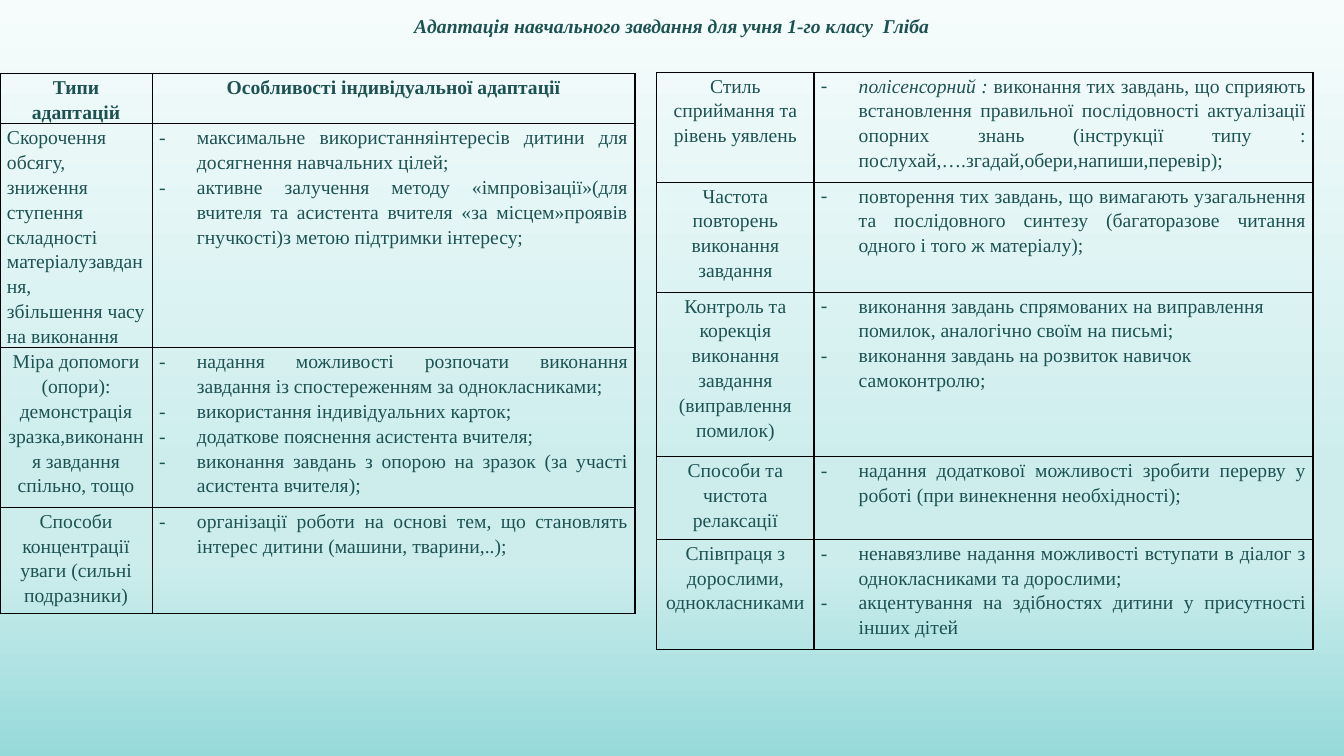
from copy import deepcopy
from dataclasses import dataclass

from lxml.etree import SubElement
from pptx import Presentation
from pptx.dml.color import RGBColor
from pptx.enum.text import MSO_ANCHOR as Anchor, MSO_AUTO_SIZE as AutoSize, PP_ALIGN as Align
from pptx.oxml import parse_xml
from pptx.oxml.ns import nsdecls, qn
from pptx.util import Pt

INK = RGBColor(0x1D, 0x52, 0x53)
BORDER = RGBColor(0x00, 0x00, 0x00)
BACKGROUND_STOPS = [
    (0, RGBColor(0xF6, 0xFC, 0xFC)),
    (0.62, RGBColor(0xCD, 0xED, 0xED)),
    (0.74, RGBColor(0xCD, 0xED, 0xED)),
    (1, RGBColor(0x97, 0xDA, 0xDA)),
]
FONT = "Times New Roman"
TITLE = "Адаптація навчального завдання для учня 1-го класу  Гліба"


@dataclass
class Row:
    height: float
    label: list
    items: list
    label_align: Align = Align.CENTER
    items_align: Align = Align.JUSTIFY
    header: bool = False
    lead: str = ""


SUPPORT_ROWS = [
    Row(36, ["Типи адаптацій"], ["Особливості індивідуальної адаптації"],
        items_align=Align.CENTER, header=True),
    Row(152,
        ["Скорочення обсягу, зниження ступення складності матеріалузавдання,",
         "збільшення часу на виконання"],
        ["максимальне використанняінтересів дитини для досягнення навчальних цілей;",
         "активне залучення методу «імпровізації»(для вчителя та асистента вчителя "
         "«за місцем»проявів гнучкості)з метою підтримки інтересу;"],
        label_align=Align.LEFT),
    Row(114,
        ["Міра допомоги (опори):", "демонстрація зразка,виконання завдання спільно, тощо"],
        ["надання можливості розпочати виконання завдання із спостереженням за однокласниками;",
         "використання індивідуальних карток;",
         "додаткове пояснення асистента вчителя;",
         "виконання завдань з опорою на зразок (за участі асистента вчителя);"]),
    Row(76, ["Способи концентрації уваги (сильні подразники)"],
        ["організації роботи на основі тем, що становлять інтерес дитини (машини, тварини,..);"]),
]

LEARNING_ROWS = [
    Row(78.6, ["Стиль сприймання та рівень уявлень"],
        ["виконання тих завдань, що сприяють встановлення правильної послідовності "
         "актуалізації опорних знань (інструкції типу : "
         "послухай,….згадай,обери,напиши,перевір);"],
        lead="полісенсорний : "),
    Row(78.6, ["Частота повторень виконання завдання"],
        ["повторення тих завдань, що вимагають узагальнення та послідовного синтезу "
         "(багаторазове читання одного і того ж матеріалу);"]),
    Row(117.5, ["Контроль та корекція виконання завдання (виправлення помилок)"],
        ["виконання завдань спрямованих на виправлення помилок, аналогічно своїм на письмі;",
         "виконання завдань на розвиток навичок самоконтролю;"],
        items_align=Align.LEFT),
    Row(59, ["Способи та чистота релаксації"],
        ["надання додаткової можливості зробити перерву у роботі (при винекнення необхідності);"]),
    Row(78.6, ["Співпраця з дорослими, однокласниками"],
        ["ненавязливе надання можливості вступати в діалог з однокласниками та дорослими;",
         "акцентування на здібностях дитини у присутності інших дітей"]),
]


def format_span(span, bold=False, italic=False):
    span.font.name = FONT
    span.font.size = Pt(14)
    span.font.color.rgb = INK
    span.font.bold = bold
    span.font.italic = italic


def paint_background(page):
    fill = page.background.fill
    fill.gradient()
    fill.gradient_angle = 270
    stop_list = page.element.xpath(".//p:bg//a:gsLst")[0]
    while len(stop_list) < len(BACKGROUND_STOPS):
        stop_list.append(deepcopy(stop_list[-1]))
    for stop, (position, color) in zip(fill.gradient_stops, BACKGROUND_STOPS):
        stop.position = position
        stop.color.rgb = color


def place_title(page):
    title = page.shapes.title
    title.left, title.top, title.width, title.height = Pt(0), Pt(0), Pt(960), Pt(36)
    frame = title.text_frame
    frame.text = TITLE
    frame.word_wrap = False
    frame.auto_size = AutoSize.NONE
    frame.vertical_anchor = Anchor.MIDDLE
    para = frame.paragraphs[0]
    para.alignment = Align.CENTER
    format_span(para.runs[0], bold=True, italic=True)


def add_dash(para):
    properties = para._p.get_or_add_pPr()
    properties.set("marL", str(Pt(27)))
    properties.set("indent", str(-Pt(27)))
    SubElement(properties, qn("a:buFont")).set("typeface", FONT)
    SubElement(properties, qn("a:buChar")).set("char", "-")


def draw_borders(cell):
    properties = cell._tc.get_or_add_tcPr()
    for index, side in enumerate(("lnL", "lnR", "lnT", "lnB")):
        properties.insert(index, parse_xml(
            f'<a:{side} {nsdecls("a")} w="{Pt(1)}"><a:solidFill>'
            f'<a:srgbClr val="{BORDER}"/></a:solidFill></a:{side}>'))


def fill_cell(cell, texts, align, bold=False, dashed=False, lead=""):
    cell.margin_left = cell.margin_right = Pt(5)
    cell.margin_top = cell.margin_bottom = Pt(0)
    cell.fill.background()
    draw_borders(cell)
    frame = cell.text_frame
    frame.text = "\n".join(texts)
    for para in frame.paragraphs:
        para.alignment = align
        para.line_spacing = 1.15
        if dashed:
            add_dash(para)
        if lead:
            body = para.text
            para.text = lead
            para.add_run().text = body
        for span in para.runs:
            format_span(span, bold, italic=span.text == lead)


def add_adaptation_table(page, left, top, widths, rows):
    height = sum(row.height for row in rows)
    frame = page.shapes.add_table(len(rows), 2, Pt(left), Pt(top), Pt(sum(widths)), Pt(height))
    table = frame.table
    table.first_row = table.horz_banding = False
    for column, width in zip(table.columns, widths):
        column.width = Pt(width)
    for index, row in enumerate(rows):
        table.rows[index].height = Pt(row.height)
        fill_cell(table.cell(index, 0), row.label, row.label_align, row.header)
        fill_cell(table.cell(index, 1), row.items, row.items_align, row.header,
                  dashed=not row.header, lead=row.lead)


def main():
    deck = Presentation()
    deck.slide_width, deck.slide_height = Pt(960), Pt(540)
    page = deck.slides.add_slide(deck.slide_layouts[5])
    paint_background(page)
    add_adaptation_table(page, 0, 52.5, (108.7, 344.9), SUPPORT_ROWS)
    place_title(page)
    add_adaptation_table(page, 469.2, 51.7, (112.2, 356.5), LEARNING_ROWS)
    deck.save("out.pptx")


if __name__ == "__main__":
    main()
